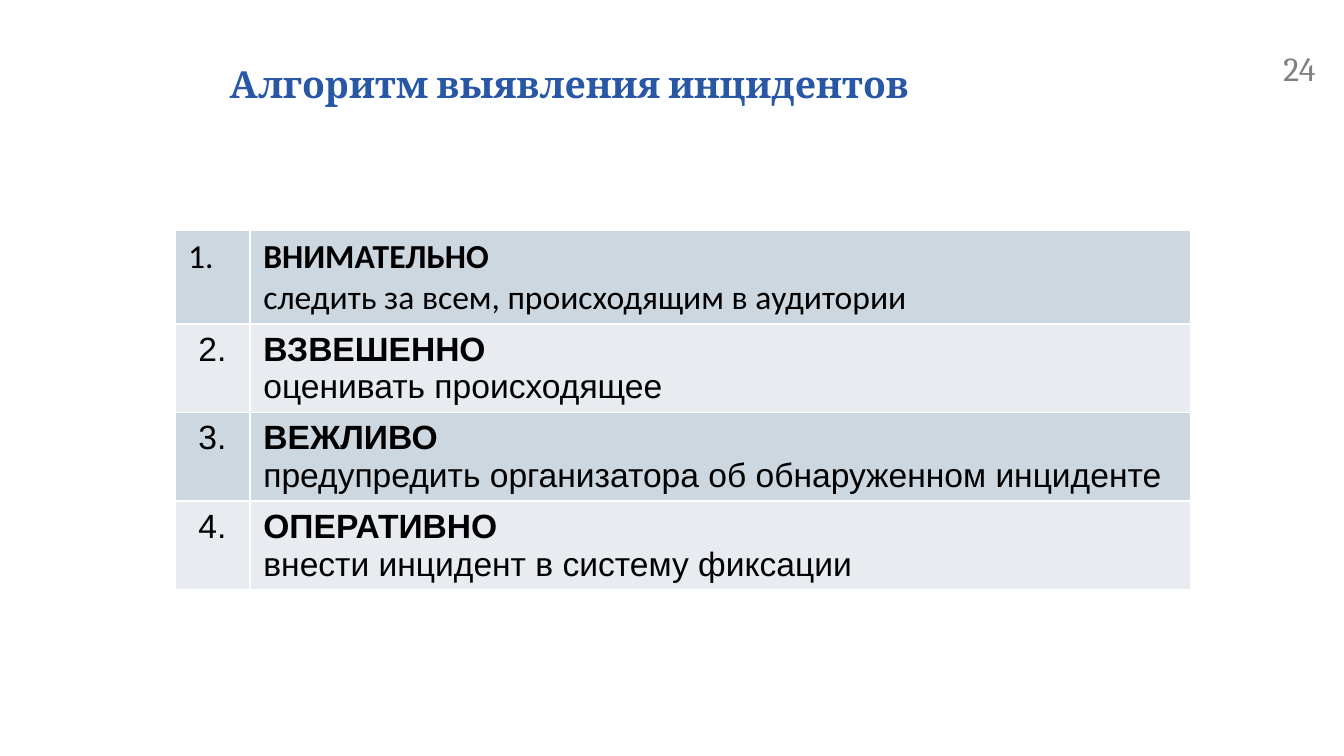
import pptx
import pptx.dml.color
import pptx.enum.text
import pptx.oxml
import pptx.oxml.ns
import pptx.util
from pptx.util import Inches

ALIGN = pptx.enum.text.PP_ALIGN
BANDS = ("CDD7DF", "E8ECF0")
STEPS = [
    ("ВНИМАТЕЛЬНО", "следить за всем, происходящим в аудитории"),
    ("ВЗВЕШЕННО", "оценивать происходящее"),
    ("ВЕЖЛИВО", "предупредить организатора об обнаруженном инциденте"),
    ("ОПЕРАТИВНО", "внести инцидент в систему фиксации"),
]


def color(value):
    return pptx.dml.color.RGBColor.from_string(value)


def write(paragraph, text, font, size=18, ink="000000", bold=False):
    paragraph.text = text
    paragraph.font.name = font
    paragraph.font.size = pptx.util.Pt(size)
    paragraph.font.bold = bold
    paragraph.font.color.rgb = color(ink)


def add_text(slide, left, top, width, height, text, **style):
    box = slide.shapes.add_textbox(
        Inches(left), Inches(top), Inches(width), Inches(height))
    box.text_frame.word_wrap = True
    paragraph = box.text_frame.paragraphs[0]
    write(paragraph, text, "Cambria", **style)
    return paragraph


def style_cell(cell, fill):
    """Give the cell its band colour and thin white borders."""
    properties = cell._tc.get_or_add_tcPr()
    for side in ("lnL", "lnR", "lnT", "lnB"):
        properties.append(pptx.oxml.parse_xml(
            f'<a:{side} {pptx.oxml.ns.nsdecls("a")} w="12700"><a:solidFill>'
            f'<a:srgbClr val="FFFFFF"/></a:solidFill></a:{side}>'))
    cell.fill.solid()
    cell.fill.fore_color.rgb = color(fill)


def add_steps(slide):
    table = slide.shapes.add_table(
        len(STEPS), 2, Inches(1.3), Inches(1.71), Inches(7.56), Inches(2.68)).table
    table.first_row = False
    for column, width in zip(table.columns, (0.56, 7)):
        column.width = Inches(width)
    for index, (manner, action) in enumerate(STEPS):
        first = index == 0
        font = "Calibri" if first else "Arial"
        table.rows[index].height = Inches(0.7 if first else 0.66)
        number, step = table.cell(index, 0), table.cell(index, 1)
        for cell in (number, step):
            style_cell(cell, BANDS[index % 2])
            cell.margin_bottom = Inches(0.05 if first else 0)
        label = number.text_frame.paragraphs[0]
        label.alignment = ALIGN.LEFT if first else ALIGN.CENTER
        write(label, f"{index + 1}.", font)
        write(step.text_frame.paragraphs[0], manner, font, bold=True)
        write(step.text_frame.add_paragraph(), action, font)


def main():
    deck = pptx.Presentation()
    deck.slide_width = Inches(10)
    deck.slide_height = deck.slide_width * 9 // 16
    slide = deck.slides.add_slide(deck.slide_layouts[6])
    add_text(slide, 9.45, 0.31, 0.55, 0.3, "24", ink="808080")
    title = add_text(slide, 1.61, 0.47, 6.32, 0.63, "Алгоритм выявления инцидентов",
                     size=20, ink="2857A5", bold=True)
    title.line_spacing = 0.8
    add_steps(slide)
    deck.save("out.pptx")


if __name__ == "__main__":
    main()
